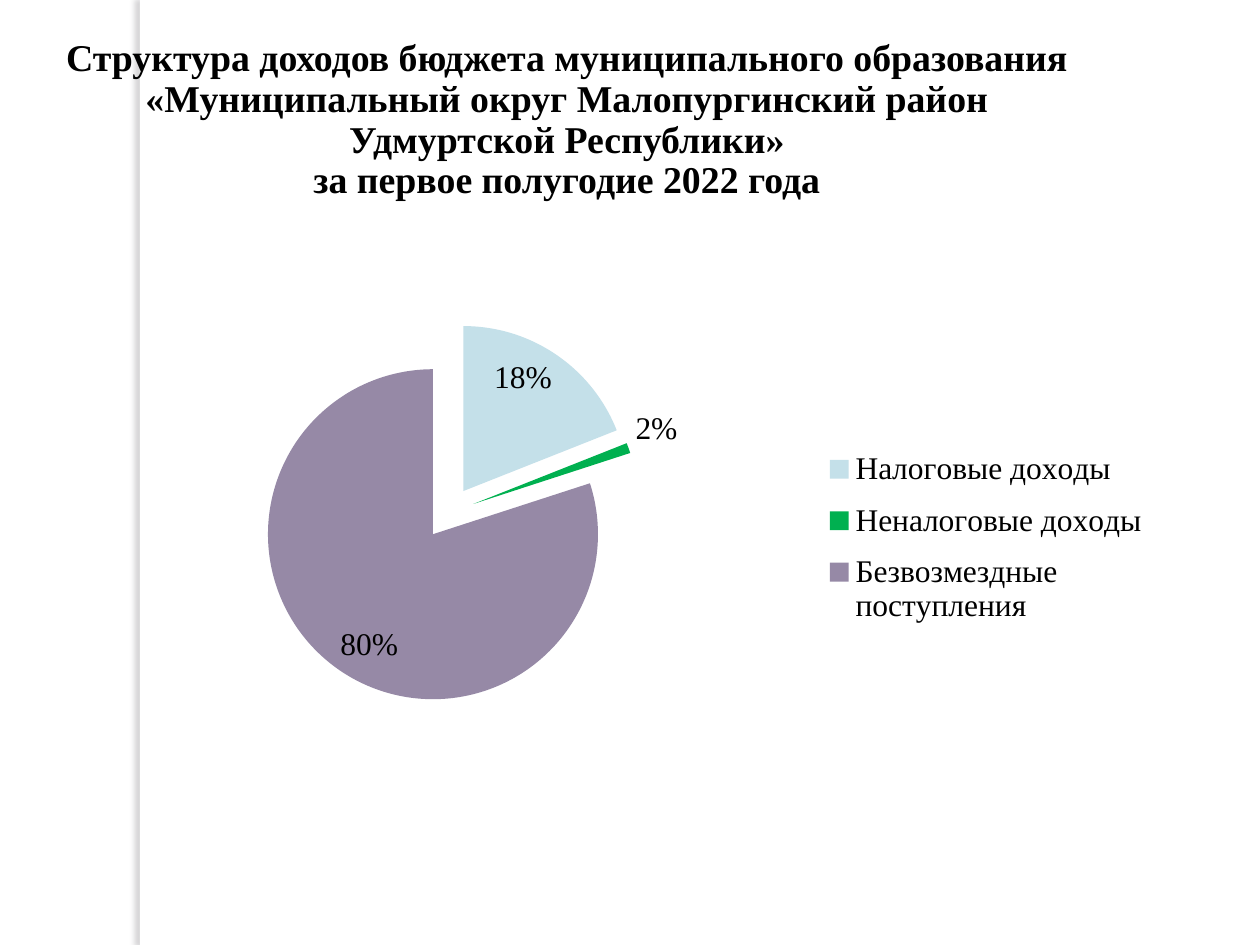
from lxml import etree
from pptx import Presentation, util as u
from pptx.chart.data import CategoryChartData
from pptx.dml.color import RGBColor
from pptx.enum import chart as ch, shapes, text
from pptx.oxml import parse_xml
from pptx.oxml.ns import nsdecls, qn

WIDTH, HEIGHT = u.Inches(10), u.Inches(7.5)
WHITE = RGBColor(0xFF, 0xFF, 0xFF)
BLACK = RGBColor(0x00, 0x00, 0x00)
LIGHT_BLUE = RGBColor(0xC4, 0xE0, 0xE9)
GREEN = RGBColor(0x00, 0xB0, 0x50)
PURPLE = RGBColor(0x96, 0x89, 0xA6)
SHADOW = RGBColor(0x64, 0x60, 0x68)
SERIF = "Times New Roman"

TITLE_LINES = [
    "Структура доходов бюджета муниципального образования "
    "«Муниципальный округ Малопургинский район",
    " Удмуртской Республики» ",
    "за первое полугодие 2022 года",
]
# category, share, colour, label wording where it differs from the share
INCOME = [
    ("Налоговые доходы", 19, LIGHT_BLUE, "18%"),
    ("Неналоговые доходы", 1, GREEN, "2%"),
    ("Безвозмездные поступления", 80, PURPLE, None),
]


def share(left, top, width, height):
    """Turn shares of the slide's size into lengths."""
    return (round(WIDTH * left), round(HEIGHT * top),
            round(WIDTH * width), round(HEIGHT * height))


def style(font, size, bold=False):
    font.name, font.size, font.bold = SERIF, u.Pt(size), bold
    font.color.rgb = BLACK


def add_side_strip(slide):
    """White strip that casts a soft shadow to its left."""
    strip = slide.shapes.add_shape(
        shapes.MSO_SHAPE.RECTANGLE, *share(0.111, 0, 0.008, 1))
    strip.fill.solid()
    strip.fill.fore_color.rgb = WHITE
    strip.line.fill.background()
    strip._element.spPr.append(parse_xml(
        f'<a:effectLst {nsdecls("a")}>'
        f'<a:outerShdw blurRad="{u.Pt(3)}" dist="{u.Pt(3)}" dir="10800000">'
        f'<a:srgbClr val="{SHADOW}"><a:alpha val="25000"/></a:srgbClr>'
        '</a:outerShdw></a:effectLst>'))


def add_title(slide):
    frame = slide.shapes.add_textbox(*share(0, 0.044, 0.9, 0.167)).text_frame
    frame.word_wrap = True
    frame.vertical_anchor = text.MSO_ANCHOR.MIDDLE
    heading = frame.paragraphs[0]
    heading.alignment = text.PP_ALIGN.CENTER
    heading.line_spacing = 0.9
    for number, line in enumerate(TITLE_LINES):
        if number:
            heading.add_line_break()
        run = heading.add_run()
        run.text = line
        style(run.font, 21.6, bold=True)


def manual_layout(x, y, w, h, inner=False):
    """Layout element in shares of the chart's size."""
    layout = etree.Element(qn("c:layout"))
    manual = etree.SubElement(layout, qn("c:manualLayout"))
    settings = [("layoutTarget", "inner")] if inner else []
    settings += [("xMode", "edge"), ("yMode", "edge"),
                 ("x", x), ("y", y), ("w", w), ("h", h)]
    for tag, value in settings:
        etree.SubElement(manual, qn(f"c:{tag}"), val=str(value))
    return layout


def place(element, layout, after=None):
    for old in element.findall(qn("c:layout")):
        element.remove(old)
    if after is None:
        element.insert(0, layout)
    else:
        element.find(qn(after)).addnext(layout)


def label_slices(series):
    labels = series.data_labels
    labels.show_percentage, labels.show_value = True, False
    labels.number_format, labels.number_format_is_linked = "0%", False
    labels.position = ch.XL_LABEL_POSITION.INSIDE_END
    style(labels.font, 18)
    for index, (_, value, colour, wording) in enumerate(INCOME):
        point = series.points[index]
        point.format.fill.solid()
        point.format.fill.fore_color.rgb = colour
        if wording:
            label = point.data_label
            run = label.text_frame.paragraphs[0].add_run()
            run.text = wording
            style(run.font, 18)
            label.position = (ch.XL_LABEL_POSITION.OUTSIDE_END if value < 5
                              else ch.XL_LABEL_POSITION.INSIDE_END)


def add_income_pie(slide):
    data = CategoryChartData()
    data.categories = [row[0] for row in INCOME]
    data.add_series("Series 1", [row[1] for row in INCOME])
    pie = slide.shapes.add_chart(
        ch.XL_CHART_TYPE.PIE, *share(0.042, 0.223, 0.892, 0.641), data).chart
    pie.has_title = False
    pie.font.name, pie.font.size = "Calibri", u.Pt(18)
    pie.font.color.rgb = BLACK
    plot = pie.plots[0]
    plot.vary_by_categories = True
    series = plot.series[0]
    label_slices(series)
    explosion = etree.Element(qn("c:explosion"), val="16")
    series._element.find(qn("c:dPt")).addprevious(explosion)

    pie.has_legend = True
    pie.legend.position = ch.XL_LEGEND_POSITION.RIGHT
    pie.legend.include_in_layout = False
    style(pie.legend.font, 18)
    place(pie.legend._element, manual_layout(0.67, 0.37, 0.32, 0.34),
          after="c:legendPos")
    place(pie._chartSpace.chart.plotArea,
          manual_layout(0.122, 0.183, 0.46, 0.632, inner=True))


def main():
    deck = Presentation()
    deck.slide_width, deck.slide_height = WIDTH, HEIGHT
    slide = deck.slides.add_slide(deck.slide_layouts[6])
    slide.background.fill.solid()
    slide.background.fill.fore_color.rgb = WHITE
    add_side_strip(slide)
    add_title(slide)
    add_income_pie(slide)
    deck.save("out.pptx")


if __name__ == "__main__":
    main()
